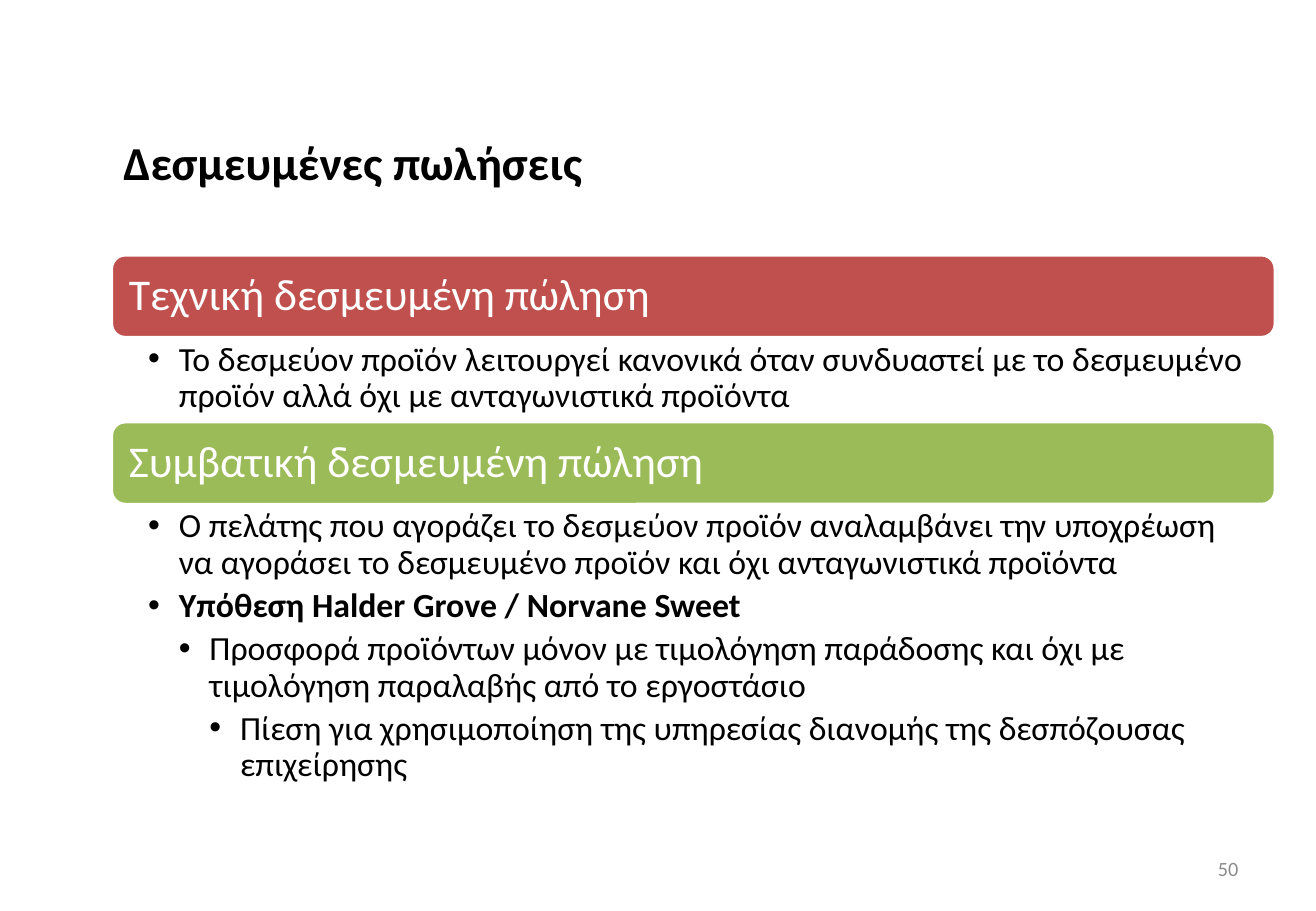
from lxml.etree import SubElement
from pptx import Presentation
from pptx.dml.color import RGBColor as Rgb
from pptx.enum.shapes import MSO_SHAPE as Shape
from pptx.enum.text import MSO_ANCHOR as Anchor, PP_ALIGN as Align
from pptx.oxml.ns import qn
from pptx.util import Cm, Pt

COLORS = {"red": "C0504D", "green": "9BBB59", "white": "FFFFFF",
          "black": "000000", "gray": "8C8C8C"}
LEFT, WIDTH = 2.33, 24.33
BAND = 1.73
STEP = 0.64

# Each section: band title, colour, list height, items as (level, text, bold)
SECTIONS = [
    ("Τεχνική δεσμευμένη πώληση", "red", 1.76, [
        (1, "Το δεσμεύον προϊόν λειτουργεί κανονικά όταν συνδυαστεί με το "
            "δεσμευμένο προϊόν αλλά όχι με ανταγωνιστικά προϊόντα", False),
    ]),
    ("Συμβατική δεσμευμένη πώληση", "green", 6.12, [
        (1, "Ο πελάτης που αγοράζει το δεσμεύον προϊόν αναλαμβάνει την "
            "υποχρέωση να αγοράσει το δεσμευμένο προϊόν και όχι "
            "ανταγωνιστικά προϊόντα", False),
        (1, "Υπόθεση Halder Grove / Norvane Sweet", True),
        (2, "Προσφορά προϊόντων μόνον με τιμολόγηση παράδοσης και όχι με "
            "τιμολόγηση παραλαβής από το εργοστάσιο", False),
        (3, "Πίεση για χρησιμοποίηση της υπηρεσίας διανομής της δεσπόζουσας "
            "επιχείρησης", False),
    ]),
]


def color(name):
    return Rgb.from_string(COLORS[name])


def write(para, text, size=20, ink="black", bold=False, align=Align.LEFT,
          level=0, line=None, after=None):
    """Fill a paragraph; a level above zero gives it a bullet."""
    para.alignment = align
    para.line_spacing = line
    if after is not None:
        para.space_after = Pt(after)
    if level:
        para.level = level
        props = para._p.get_or_add_pPr()
        props.set("marL", str(Cm(STEP * level)))
        props.set("indent", str(-Cm(STEP)))
        SubElement(props, qn("a:buFont")).set("typeface", "Arial")
        SubElement(props, qn("a:buChar")).set("char", "•")
    run = para.add_run()
    run.text = text
    font = run.font
    font.name, font.size, font.bold = "Calibri", Pt(size), bold
    font.color.rgb = color(ink)


def setup(frame, anchor, side=0.25, right=0.25, edge=0.13):
    frame.word_wrap = True
    frame.vertical_anchor = anchor
    frame.margin_left, frame.margin_right = Cm(side), Cm(right)
    frame.margin_top = frame.margin_bottom = Cm(edge)
    return frame


def label(slide, box, text, **style):
    shape = slide.shapes.add_textbox(*map(Cm, box))
    frame = setup(shape.text_frame, Anchor.MIDDLE)
    write(frame.paragraphs[0], text, **style)


def band(slide, box, text, fill):
    shape = slide.shapes.add_shape(Shape.ROUNDED_RECTANGLE, *map(Cm, box))
    shape.shadow.inherit = False
    shape.fill.solid()
    shape.fill.fore_color.rgb = color(fill)
    shape.line.color.rgb = color("white")
    shape.line.width = Pt(2)
    frame = setup(shape.text_frame, Anchor.MIDDLE, 0.28, 0.28, 0.28)
    write(frame.paragraphs[0], text, size=26, ink="white", line=0.9)


def points(slide, box, items):
    shape = slide.shapes.add_textbox(*map(Cm, box))
    frame = setup(shape.text_frame, Anchor.TOP, 0.77, 0.5, 0.09)
    for i, (level, text, bold) in enumerate(items):
        para = frame.add_paragraph() if i else frame.paragraphs[0]
        write(para, text, bold=bold, level=level, line=0.9, after=4)


def stack(slide, left, top, width):
    """Place each band with its list below, one section under another."""
    for title, fill, height, items in SECTIONS:
        band(slide, (left, top, width, BAND), title, fill)
        points(slide, (left, top + BAND, width, height), items)
        top += BAND + height


def main():
    deck = Presentation()
    deck.slide_width, deck.slide_height = Cm(27.51), Cm(19.05)
    slide = deck.slides.add_slide(deck.slide_layouts[6])
    label(slide, (LEFT, 2.16, WIDTH, 2.44), "Δεσμευμένες πωλήσεις",
          size=28, bold=True)
    stack(slide, LEFT, 5.33, WIDTH)
    label(slide, (19.71, 17.65, 6.43, 1.02), "50", size=12, ink="gray",
          align=Align.RIGHT)
    deck.save("out.pptx")


if __name__ == "__main__":
    main()
